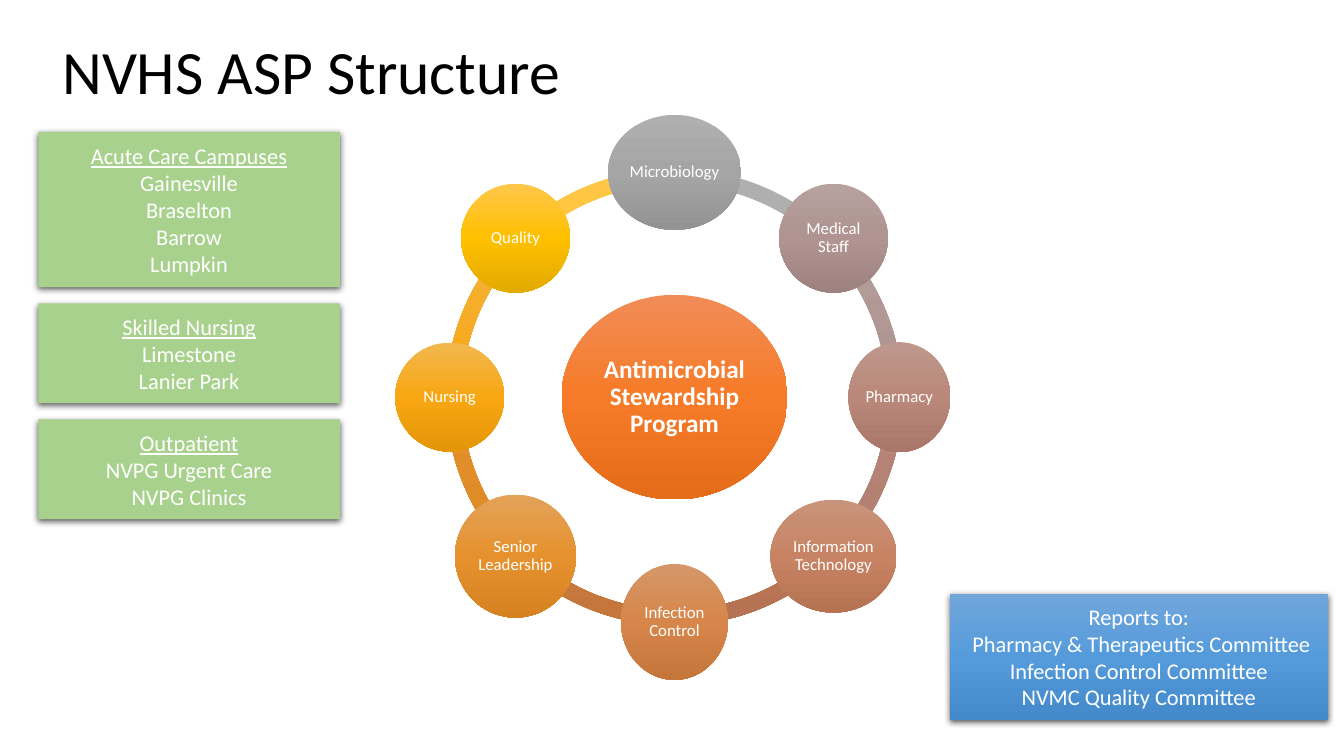
"""Build a slide showing the structure of an antimicrobial stewardship program."""
from copy import deepcopy
from math import cos, pi, sin

from lxml.etree import SubElement
from pptx import Presentation
from pptx.dml.color import RGBColor as RGB
from pptx.enum.shapes import MSO_SHAPE as SHAPE
from pptx.enum.text import MSO_ANCHOR as ANCHOR, PP_ALIGN as ALIGN
from pptx.oxml.ns import qn
from pptx.util import Pt

PX = 9144
FONT = "Calibri"
COLORS = {
    "black": "000000",
    "white": "FFFFFF",
    "green": "A9D18E",
    "blue": ("71A6DB", "559BDB", "448ACA"),
    "core": ("F18C57", "F67B28", "E56C19"),
    "Microbiology": ("AFAFAF", "A5A5A5", "939393"),
    "Medical Staff": ("B6A19E", "AF9491", "9D827F"),
    "Pharmacy": ("BF988D", "BA887B", "A9776A"),
    "Information Technology": ("C9947B", "C78363", "B67353"),
    "Infection Control": ("D59769", "D6864A", "C5763A"),
    "Senior Leadership": ("E3A35A", "E6912E", "D68220"),
    "Nursing": ("F2B84F", "F8A612", "E59607"),
    "Quality": ("FFC74B", "FFC000", "E3AA00"),
}
TEAMS = [
    ("Microbiology", 132, 114),
    ("Medical Staff", 108, 108),
    ("Pharmacy", 101, 109),
    ("Information Technology", 125, 112),
    ("Infection Control", 106, 115),
    ("Senior Leadership", 120, 122),
    ("Nursing", 108, 108),
    ("Quality", 108, 108),
]
SITES = [
    (131, 154, ["Acute Care Campuses", "Gainesville", "Braselton", "Barrow", "Lumpkin"]),
    (301, 99, ["Skilled Nursing", "Limestone", "Lanier Park"]),
    (416, 99, ["Outpatient", "NVPG Urgent Care", "NVPG Clinics"]),
]
BOARDS = ["Reports to:", " Pharmacy & Therapeutics Committee",
          "Infection Control Committee", "NVMC Quality Committee"]
MID_X, MID_Y, ORBIT = 669, 394, 223
RING, BAND = 453, 0.034
TURN = 216


def scale(*sizes):
    """Turn px lengths into EMU."""
    return [round(size * PX) for size in sizes]


def paint(shape, color):
    """Fill a shape with one colour or with a vertical three-stop gradient."""
    if isinstance(color, str):
        shape.fill.solid()
        shape.fill.fore_color.rgb = RGB.from_string(color)
        return
    shape.fill.gradient()
    shape.fill.gradient_angle = 270
    stops = shape._element.spPr.find(".//" + qn("a:gsLst"))
    stops.insert(1, deepcopy(stops[0]))
    for stop, tone, place in zip(shape.fill.gradient_stops, color, (0, 0.5, 1)):
        stop.color.rgb = RGB.from_string(tone)
        stop.position = place


def add_form(slide, kind, box, color):
    """Add a filled preset shape without outline or shadow."""
    shape = slide.shapes.add_shape(kind, *scale(*box))
    shape.shadow.inherit = False
    shape.line.fill.background()
    paint(shape, color)
    return shape


def write(shape, lines, size, color="white", align=ALIGN.CENTER,
          space=1, bold=False, head=False, inset=None):
    """Write lines into a shape, underlining the first when it is a heading."""
    frame = shape.text_frame
    frame.word_wrap = True
    frame.vertical_anchor = ANCHOR.MIDDLE
    if inset is not None:
        pad = inset * PX
        frame.margin_left = frame.margin_right = pad
        frame.margin_top = frame.margin_bottom = pad
    for i, line in enumerate(lines):
        para = frame.add_paragraph() if i else frame.paragraphs[0]
        para.alignment = align
        para.line_spacing = space
        run = para.add_run()
        run.text = line
        font = run.font
        font.name, font.size, font.bold = FONT, Pt(size), bold
        font.underline = head and i == 0
        font.color.rgb = RGB.from_string(COLORS[color])


def add_shade(shape):
    """Give a shape a soft shadow below it."""
    effects = shape._element.spPr.find(qn("a:effectLst"))
    shade = SubElement(effects, qn("a:outerShdw"), blurRad=str(Pt(4.5)),
                       dist=str(Pt(1.5)), dir="5400000", algn="ctr", rotWithShape="0")
    tone = SubElement(shade, qn("a:srgbClr"), val=COLORS["black"])
    SubElement(tone, qn("a:alpha"), val="63000")


def add_card(slide, box, color, lines, head=False):
    """Add a shaded box with centred lines."""
    card = add_form(slide, SHAPE.RECTANGLE, box, COLORS[color])
    add_shade(card)
    write(card, lines, 16, head=head)


def add_arc(slide, i, color):
    """Add the ring segment that follows team i clockwise."""
    box = (MID_X - RING / 2, MID_Y - RING / 2, RING, RING)
    arc = add_form(slide, SHAPE.BLOCK_ARC, box, color)
    step = TURN / len(TEAMS)
    start = TURN * 0.75 + i * step
    for k, value in enumerate((start % TURN, (start + step) % TURN, BAND)):
        arc.adjustments[k] = value


def add_node(slide, mid, size, color, text, points, inset, bold=False):
    """Add a labelled ellipse around a midpoint."""
    (x, y), (wide, high) = mid, size
    box = (x - wide / 2, y - high / 2, wide, high)
    node = add_form(slide, SHAPE.OVAL, box, COLORS[color])
    write(node, [text], points, space=0.9, bold=bold, inset=inset)


def add_wheel(slide):
    """Add the ring, the core and the teams around it."""
    for i, (name, _, _) in enumerate(TEAMS):
        add_arc(slide, i, COLORS[name])
    add_node(slide, (MID_X, MID_Y), (224, 203), "core",
             "Antimicrobial Stewardship Program", 18, 3, bold=True)
    for i, (name, wide, high) in enumerate(TEAMS):
        angle = 2 * pi * i / len(TEAMS)
        mid = (MID_X + ORBIT * sin(angle), MID_Y - ORBIT * cos(angle))
        add_node(slide, mid, (wide, high), name, name, 12, 2)


def main():
    """Build the slide and save it."""
    deck = Presentation()
    deck.slide_width, deck.slide_height = scale(1333, 750)
    slide = deck.slides.add_slide(deck.slide_layouts[6])
    add_wheel(slide)
    title = slide.shapes.add_textbox(*scale(52, 11, 1200, 125))
    write(title, ["NVHS ASP Structure"], 44, "black", ALIGN.LEFT, 0.9)
    add_card(slide, (942, 589, 375, 125), "blue", BOARDS)
    for top, high, lines in SITES:
        add_card(slide, (38, top, 299, high), "green", lines, head=True)
    deck.save("out.pptx")


if __name__ == "__main__":
    main()
